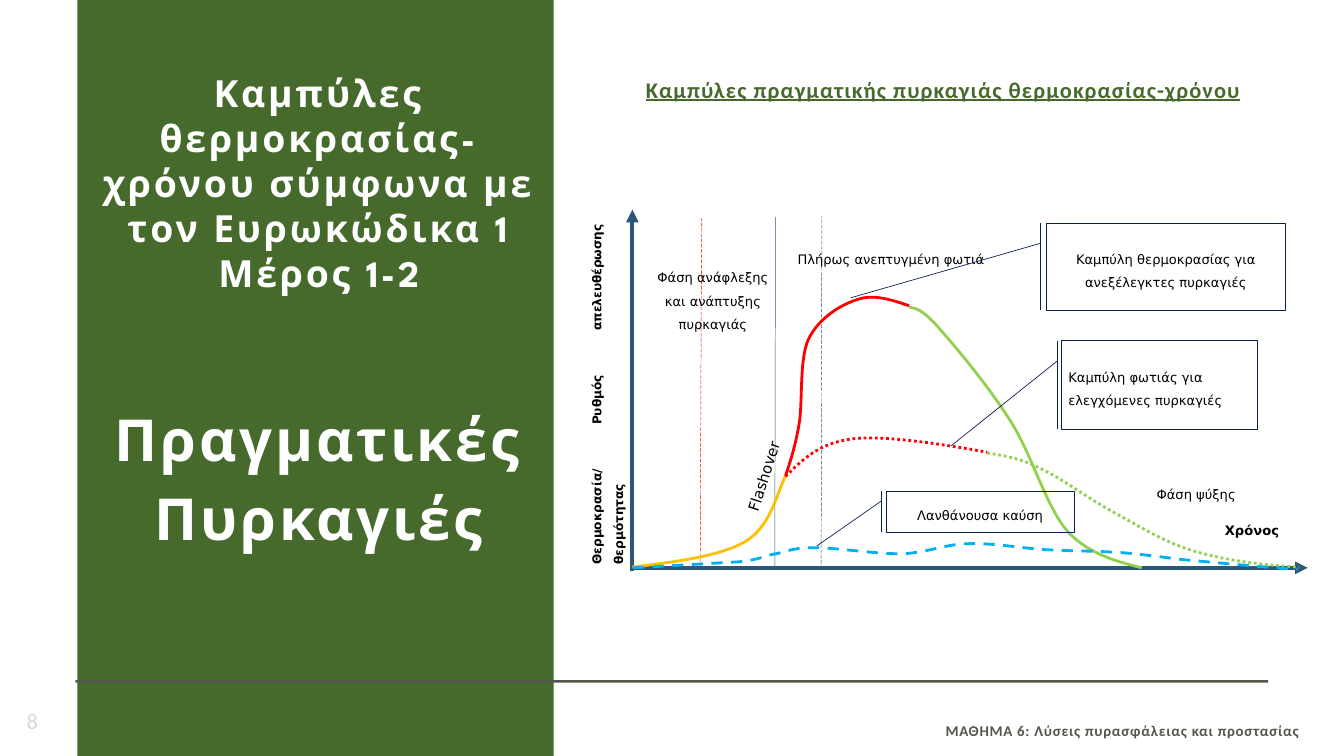
from lxml import etree
from pptx import Presentation
from pptx import util as u
from pptx.dml.color import RGBColor
from pptx.enum import dml, shapes, text
from pptx.oxml.ns import qn

GREEN, GRAY, NAVY, AXIS = "456A2C", "52584D", "0D1D51", "2C567A"
RED, LIME, AMBER, BLUE = "FF0000", "92D050", "FFC000", "00B0F0"
LEFT, CENTER = text.PP_ALIGN.LEFT, text.PP_ALIGN.CENTER
RIGHT, JUSTIFY = text.PP_ALIGN.RIGHT, text.PP_ALIGN.JUSTIFY
TOP, MIDDLE = text.MSO_ANCHOR.TOP, text.MSO_ANCHOR.MIDDLE
DASH = dml.MSO_LINE


def write(shape, lines, size, font="DejaVu Sans", color="000000", bold=False, align=CENTER,
          anchor=MIDDLE, leading=1.5, tracking=0, inset=True):
    frame = shape.text_frame
    frame.text = lines
    frame.word_wrap = True
    frame.auto_size = text.MSO_AUTO_SIZE.NONE
    frame.vertical_anchor = anchor
    if not inset:
        frame.margin_left = frame.margin_right = frame.margin_top = frame.margin_bottom = 0
    for paragraph in frame.paragraphs:
        paragraph.alignment = align
        paragraph.line_spacing = leading
        paragraph.font.size = u.Pt(size)
        paragraph.font.name = font
        paragraph.font.bold = bold
        paragraph.font.color.rgb = RGBColor.from_string(color)
        for run in paragraph.runs:
            if tracking:
                run.font._element.set("spc", str(round(tracking * 100)))
    return frame


def stroke(line, color, width, dash=None):
    line.color.rgb = RGBColor.from_string(color)
    line.width = u.Pt(width)
    if dash:
        line.dash_style = dash


presentation = Presentation()
presentation.slide_width = u.Inches(20)
presentation.slide_height = u.Inches(11.25)
slide = presentation.slides.add_slide(presentation.slide_layouts[5])
items = slide.shapes

# Heading above the diagram
heading = items.add_textbox(*map(u.Inches, (9.61, 1.06, 9.27, 0.48)))
frame = write(heading, "Καμπύλες πραγματικής πυρκαγιάς θερμοκρασίας-χρόνου", 24, "Calibri", GREEN,
              True, LEFT, TOP, u.Pt(33.6), 1.2, inset=False)
frame.paragraphs[0].font.underline = True

# Side panel and footer rule
for box, color in [((1.15, -0.37, 7.09, 11.98), GREEN), ((1.12, 10.12, 17.75, 0.04), GRAY)]:
    block = items.add_shape(shapes.MSO_SHAPE.RECTANGLE, *map(u.Inches, box))
    block.shadow.inherit = False
    block.fill.solid()
    block.fill.fore_color.rgb = RGBColor.from_string(color)
    block.line.fill.background()

# Title, brought in front of the panel
title = items.title
title.left, title.top, title.width, title.height = map(u.Inches, (1.46, 1.05, 6.57, 7.2))
frame = write(title, "Καμπύλες θερμοκρασίας-χρόνου σύμφωνα με τον Ευρωκώδικα 1 Μέρος 1-2\n"
              "Πραγματικές Πυρκαγιές", 40, "League Spartan", "FFFFFF", True, CENTER, TOP,
              1.0, 3.1, inset=False)
subject = frame.paragraphs[1]
subject.font.size = u.Pt(62)
subject.line_spacing = u.Pt(83.7)
subject.space_before = u.Pt(108)
items._spTree.append(title._element)

# Page number and footer
number = items.add_textbox(*map(u.Inches, (0.3, 10.52, 2.33, 0.4)))
write(number, "8", 24, "Calibri", "D9D9D9", align=LEFT, leading=1.0, tracking=1.2)
footer = items.add_textbox(*map(u.Inches, (11.33, 10.7, 8.01, 0.29)))
write(footer, "ΜΑΘΗΜΑ 6: Λύσεις πυρασφάλειας και προστασίας", 16, "Calibri", GRAY,
      True, RIGHT, TOP, u.Pt(22.4), 0.8, inset=False)

# Phase boundaries and axes
for start_x, start_y, end_x, end_y, color, width, dash in [
    (10.42, 8.44, 10.44, 3.25, RED, 0.5, DASH.LONG_DASH),
    (11.53, 8.45, 11.54, 3.23, AXIS, 0.5, None),
    (12.22, 8.47, 12.23, 3.22, AXIS, 0.5, DASH.LONG_DASH),
    (9.41, 8.49, 9.41, 3.12, AXIS, 4.5, None),
    (9.4, 8.45, 19.46, 8.45, AXIS, 4.5, None),
]:
    connector = items.add_connector(shapes.MSO_CONNECTOR.STRAIGHT,
                                    *map(u.Inches, (start_x, start_y, end_x, end_y)))
    stroke(connector.line, color, width, dash)
    if width > 1:
        etree.SubElement(connector.line._get_or_add_ln(), qn("a:tailEnd"), type="triangle")
    etree.SubElement(connector._element.spPr, qn("a:effectLst"))

# Fire curves: a start point, then three points per Bézier segment
curves = [
    (AMBER, None, [(9.41, 8.44), (10.06, 8.36), (10.71, 8.28), (11.09, 8.06),
                   (11.47, 7.83), (11.55, 7.37), (11.69, 7.08)]),
    (RED, None, [(11.69, 7.08), (11.76, 6.87), (11.83, 6.66), (11.89, 6.32),
                 (11.95, 5.98), (11.89, 5.36), (12.03, 5.05),
                 (12.18, 4.74), (12.5, 4.54), (12.75, 4.46),
                 (13, 4.37), (13.26, 4.46), (13.53, 4.55)]),
    (LIME, None, [(13.53, 4.57), (13.63, 4.59), (13.73, 4.6), (13.98, 4.89),
                  (14.23, 5.17), (14.72, 5.76), (15.04, 6.27),
                  (15.36, 6.77), (15.57, 7.55), (15.89, 7.91),
                  (16.22, 8.27), (16.69, 8.37), (16.99, 8.45)]),
    (RED, DASH.ROUND_DOT, [(11.69, 7.09), (11.94, 6.84), (12.19, 6.59), (12.69, 6.53),
                           (13.2, 6.47), (14.2, 6.64), (14.69, 6.73)]),
    (LIME, DASH.ROUND_DOT, [(14.69, 6.74), (14.93, 6.78), (15.16, 6.81), (15.48, 6.97),
                            (15.81, 7.12), (16.25, 7.46), (16.64, 7.66),
                            (17.02, 7.87), (17.35, 8.08), (17.8, 8.21),
                            (18.24, 8.34), (18.8, 8.41), (19.33, 8.44)]),
    (BLUE, DASH.DASH, [(9.42, 8.45), (9.95, 8.42), (10.47, 8.39), (11, 8.36),
                       (11.35, 8.32), (11.36, 8.27), (11.55, 8.24),
                       (11.73, 8.2), (11.81, 8.15), (12.12, 8.15),
                       (12.44, 8.15), (13.06, 8.25), (13.44, 8.24),
                       (13.83, 8.22), (14.08, 8.09), (14.43, 8.09),
                       (14.79, 8.08), (15.21, 8.16), (15.57, 8.18),
                       (15.94, 8.2), (16.31, 8.2), (16.63, 8.22),
                       (16.96, 8.24), (17.52, 8.32), (17.52, 8.32),
                       (17.97, 8.36), (18.88, 8.45), (19.31, 8.47)]),
]
for color, dash, points in curves:
    points = [(u.Inches(x), u.Inches(y)) for x, y in points]
    builder = items.build_freeform(*points[0])
    builder.add_line_segments(points[1:], close=False)
    curve = builder.convert_to_shape()
    curve.shadow.inherit = False
    curve.fill.background()
    stroke(curve.line, color, 3, dash)
    # Merge each three line steps into one cubic segment
    steps = list(curve._element.iter(qn("a:lnTo")))
    for first in range(0, len(steps), 3):
        cubic = etree.Element(qn("a:cubicBezTo"))
        steps[first].addprevious(cubic)
        for step in steps[first:first + 3]:
            cubic.append(step[0])
            step.getparent().remove(step)

# Axis titles and phase labels
for box, label, size, bold, align, anchor, rotation, vertical in [
    ((8.61, 3.24, 0.72, 5.26), "Θερμοκρασία/ Ρυθμός απελευθέρωσης θερμότητας",
     13, True, JUSTIFY, TOP, 0, True),
    ((18.13, 7.61, 1.63, 0.64), "Χρόνος", 14, True, JUSTIFY, TOP, 0, False),
    ((9.61, 3.36, 2, 2.12), "Φάση ανάφλεξης και ανάπτυξης πυρκαγιάς",
     14, False, CENTER, MIDDLE, 0, False),
    ((11.69, 3.31, 3.14, 0.97), "Πλήρως ανεπτυγμένη φωτιά", 14, False, CENTER, MIDDLE, 0, False),
    ((16.21, 7.08, 3.18, 0.61), "Φάση ψύξης", 14, False, CENTER, TOP, 0, False),
    ((10.48, 6.75, 1.64, 0.64), "Flashover", 16, False, CENTER, MIDDLE, 287.9, False),
]:
    label_box = items.add_textbox(*map(u.Inches, box))
    label_box.rotation = rotation
    frame = write(label_box, label, size, bold=bold, align=align, anchor=anchor)
    if rotation:
        frame.paragraphs[0].space_after = u.Pt(6)
    if vertical:
        frame._txBody.bodyPr.set("vert", "vert270")

# Callouts pointing at the curves
for box, label, align, space_after, tip_y, tip_x in [
    ((15.57, 3.32, 3.56, 1.3), "Καμπύλη θερμοκρασίας για ανεξέλεγκτες πυρκαγιές",
     CENTER, 0, 0.855, -0.817),
    ((15.8, 5.07, 2.91, 1.32), "Καμπύλη φωτιάς για ελεγχόμενες πυρκαγιές",
     LEFT, 6, 1.185, -0.566),
    ((13.19, 7.31, 2.79, 0.61), "Λανθάνουσα καύση", CENTER, 0, 1.335, -0.37),
]:
    callout = items.add_shape(shapes.MSO_SHAPE.LINE_CALLOUT_1_BORDER_AND_ACCENT_BAR,
                              *map(u.Inches, box))
    for index, value in enumerate((0.232, -0.025, tip_y, tip_x)):
        callout.adjustments[index] = value
    callout.shadow.inherit = False
    callout.fill.background()
    stroke(callout.line, NAVY, 0.75)
    frame = write(callout, label, 14, align=align)
    frame.paragraphs[0].space_after = u.Pt(space_after)

presentation.save("out.pptx")
